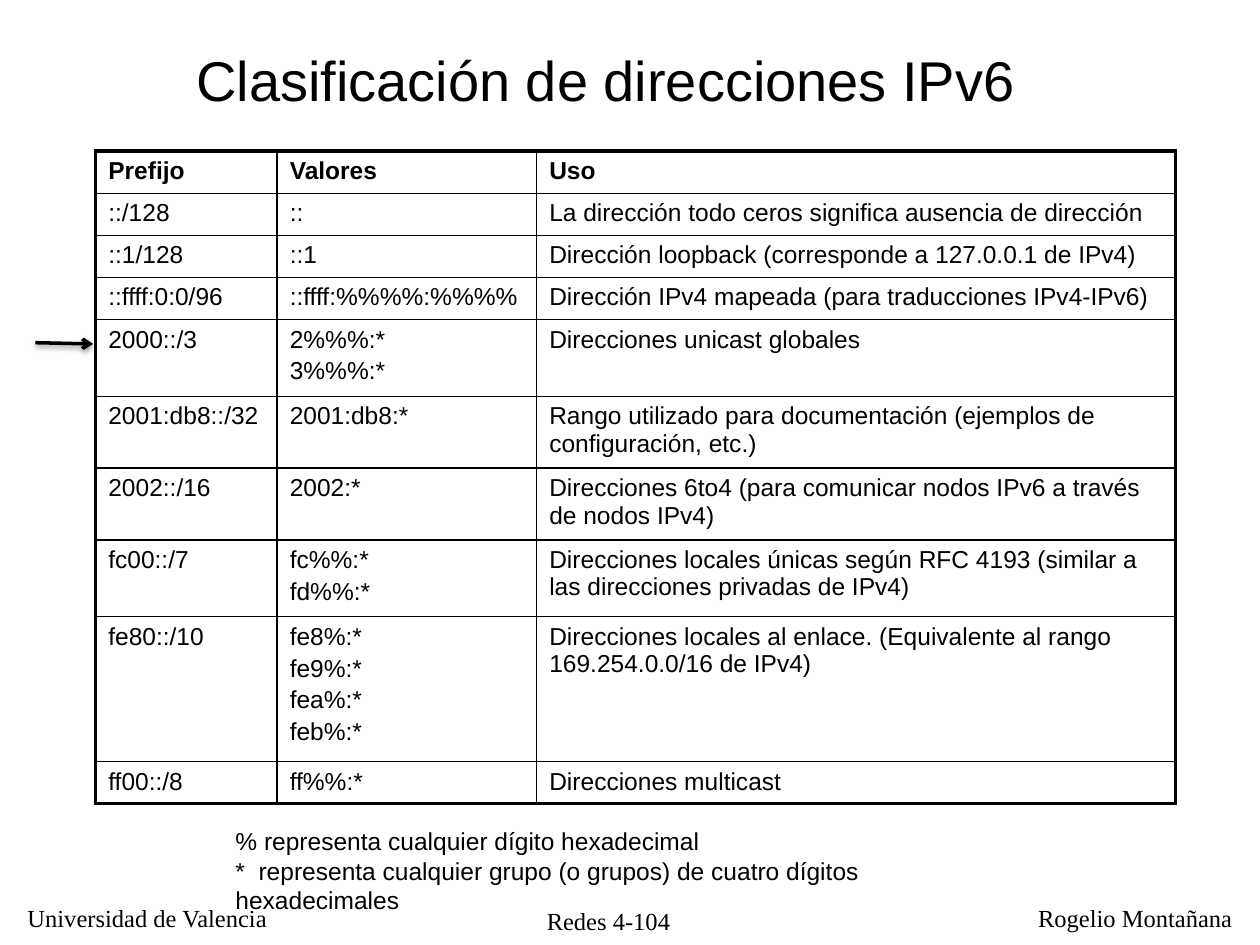
from lxml import etree
from pptx import Presentation
from pptx.dml.color import RGBColor
from pptx.enum.shapes import MSO_CONNECTOR
from pptx.enum.text import PP_ALIGN
from pptx.oxml import parse_xml
from pptx.oxml.ns import nsdecls, qn
from pptx.util import Inches, Pt

LEFT, CENTER = PP_ALIGN.LEFT, PP_ALIGN.CENTER
STRAIGHT = MSO_CONNECTOR.STRAIGHT
COLORS = {"ink": "000000"}
SANS, SERIF = "Arial", "Times New Roman"
OUTER, INNER = 2.25, 1


def write(text_frame, lines, font, size, align=LEFT, bold=False, gap=0):
    """Write one paragraph per line, with a gap between paragraphs."""
    for index, line in enumerate(lines):
        paragraph = text_frame.paragraphs[0] if index == 0 else text_frame.add_paragraph()
        paragraph.alignment = align
        if index and gap:
            paragraph.space_before = Pt(gap)
        run = paragraph.add_run()
        run.text = line
        run.font.name = font
        run.font.size = Pt(size)
        run.font.bold = bold
        run.font.color.rgb = RGBColor.from_string(COLORS["ink"])


def set_border(cell, side, width):
    """Draw one side (L, R, T or B) of a table cell."""
    properties = cell._tc.get_or_add_tcPr()
    line = etree.SubElement(properties, qn(f"a:ln{side}"), w=str(Pt(width)))
    fill = etree.SubElement(line, qn("a:solidFill"))
    etree.SubElement(fill, qn("a:srgbClr"), val=COLORS["ink"])


presentation = Presentation()
presentation.slide_width = Inches(10)
presentation.slide_height = Inches(7.5)
slide = presentation.slides.add_slide(presentation.slide_layouts[6])

# Footer, title and legend: position, lines, font, size, alignment, wrap
texts = [
    ((4.18, 7.14, 1.3, 0.3), ["Redes 4-104"], SERIF, 14, CENTER, True),
    ((0.12, 7.12, 2.13, 0.33), ["Universidad de Valencia"], SERIF, 14, LEFT, False),
    ((8.14, 7.12, 1.74, 0.33), ["Rogelio Montañana"], SERIF, 14, LEFT, False),
    ((1.31, 0.31, 7, 0.63), ["Clasificación de direcciones IPv6"], SANS, 32, CENTER, True),
    ((1.77, 6.51, 6.45, 0.57),
     ["% representa cualquier dígito hexadecimal",
      "*  representa cualquier grupo (o grupos) de cuatro dígitos hexadecimales"],
     SANS, 14, LEFT, True),
]
for position, lines, font, size, align, wrap in texts:
    text_box = slide.shapes.add_textbox(*map(Inches, position))
    text_box.text_frame.word_wrap = wrap
    write(text_box.text_frame, lines, font, size, align)

# Table of prefixes: row height, prefix, values, use
rows = [
    (0.33, "Prefijo", ["Valores"], "Uso"),
    (0.33, "::/128", ["::"], "La dirección todo ceros significa ausencia de dirección"),
    (0.33, "::1/128", ["::1"], "Dirección loopback (corresponde a 127.0.0.1 de IPv4)"),
    (0.33, "::ffff:0:0/96", ["::ffff:%%%%:%%%%"],
     "Dirección IPv4 mapeada (para traducciones IPv4-IPv6)"),
    (0.61, "2000::/3", ["2%%%:*", "3%%%:*"], "Direcciones unicast globales"),
    (0.57, "2001:db8::/32", ["2001:db8:*"],
     "Rango utilizado para documentación (ejemplos de configuración, etc.)"),
    (0.57, "2002::/16", ["2002:*"],
     "Direcciones 6to4 (para comunicar nodos IPv6 a través de nodos IPv4)"),
    (0.61, "fc00::/7", ["fc%%:*", "fd%%:*"],
     "Direcciones locales únicas según RFC 4193 (similar a las direcciones privadas de IPv4)"),
    (1.15, "fe80::/10", ["fe8%:*", "fe9%:*", "fea%:*", "feb%:*"],
     "Direcciones locales al enlace. (Equivalente al rango 169.254.0.0/16 de IPv4)"),
    (0.33, "ff00::/8", ["ff%%:*"], "Direcciones multicast"),
]
column_widths = [1.44, 2.06, 5.07]
last_row, last_column = len(rows) - 1, len(column_widths) - 1
table = slide.shapes.add_table(
    len(rows), len(column_widths), Inches(0.76), Inches(1.2),
    Inches(sum(column_widths)), Inches(sum(row[0] for row in rows))).table
table.first_row = False
table.horz_banding = False
for column, width in zip(table.columns, column_widths):
    column.width = Inches(width)
for r, (height, prefix, values, use) in enumerate(rows):
    table.rows[r].height = Inches(height)
    for c, lines in enumerate([[prefix], values, [use]]):
        cell = table.cell(r, c)
        write(cell.text_frame, lines, SANS, 14, bold=r == 0, gap=2.4)
        edges = {"L": c == 0, "R": c == last_column, "T": r == 0, "B": r == last_row}
        for side, is_outer in edges.items():
            set_border(cell, side, OUTER if is_outer else INNER)
        cell.fill.background()

# Arrow pointing at the global unicast row
arrow = slide.shapes.add_connector(
    STRAIGHT, Inches(0.28), Inches(2.72), Inches(0.74), Inches(2.73))
arrow.line.color.rgb = RGBColor.from_string(COLORS["ink"])
arrow.line.width = Pt(2)
etree.SubElement(arrow.line._get_or_add_ln(), qn("a:tailEnd"), type="arrow")
arrow._element.spPr.append(parse_xml(
    f'<a:effectLst {nsdecls("a")}>'
    f'<a:outerShdw blurRad="{Pt(3.1)}" dist="{Pt(1.6)}" dir="5400000" rotWithShape="0">'
    f'<a:srgbClr val="{COLORS["ink"]}"><a:alpha val="38000"/></a:srgbClr>'
    '</a:outerShdw></a:effectLst>'))

presentation.save("out.pptx")
